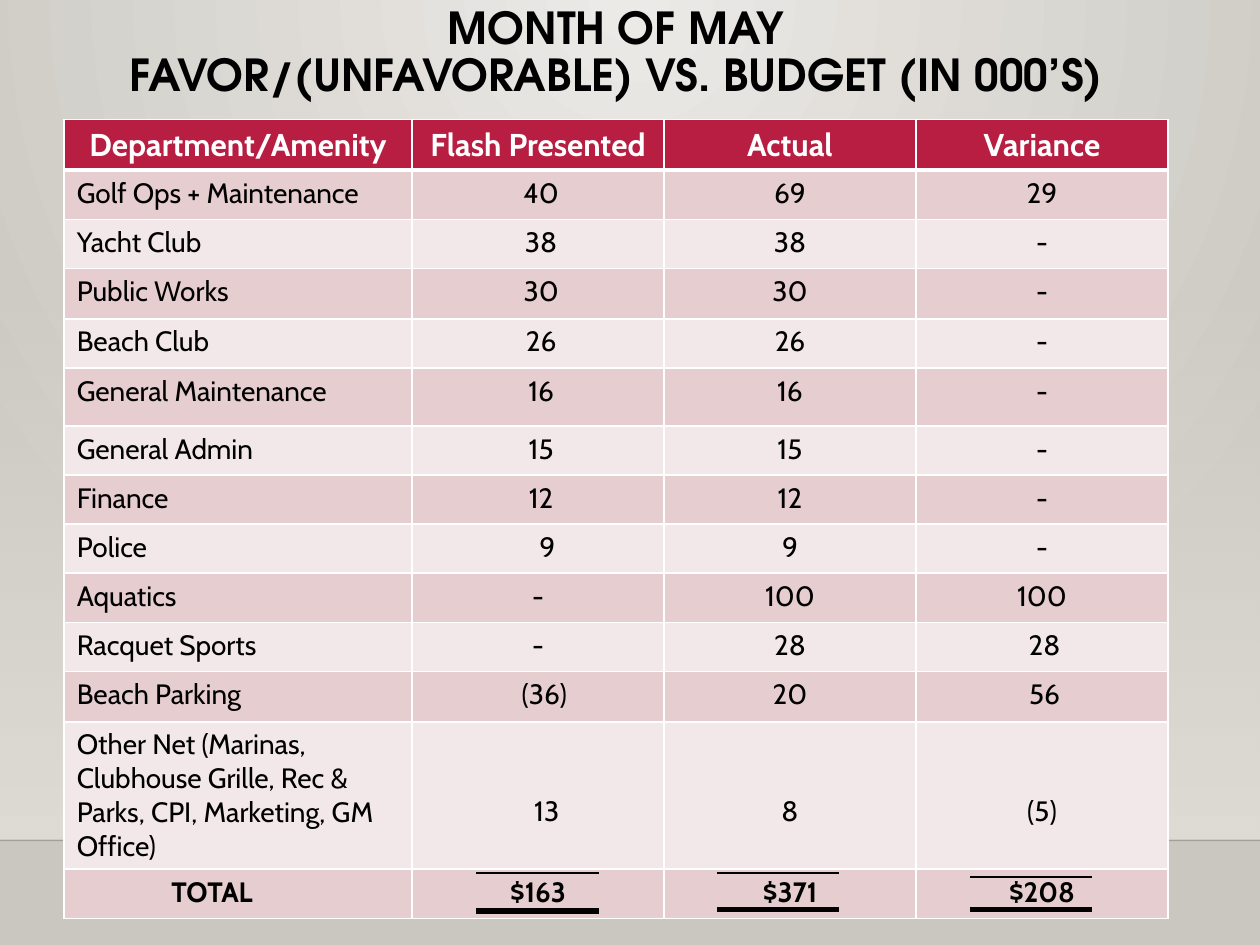
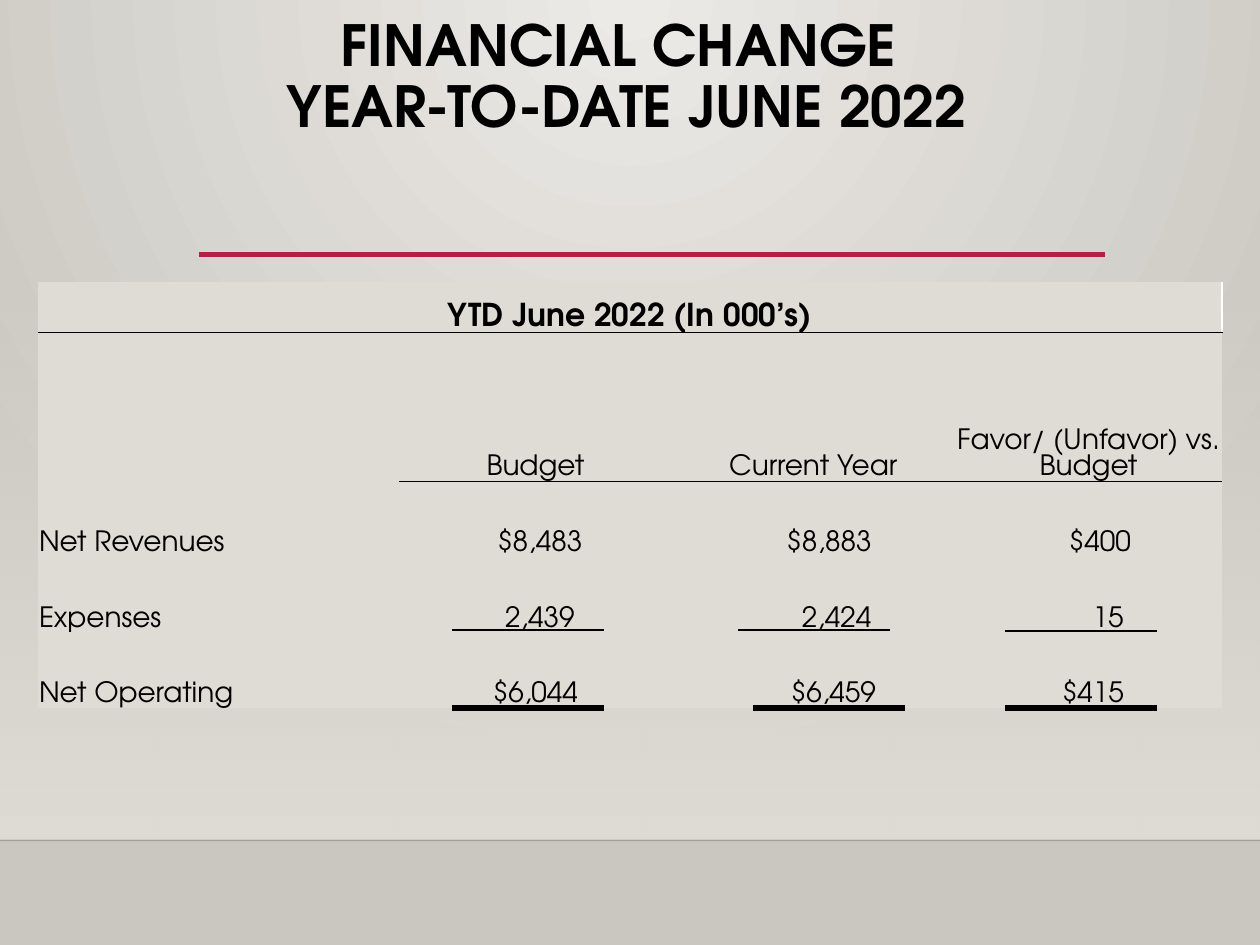
"""Build two financial slides: May variances by department and year-to-date June results."""
from pptx import Presentation
from pptx import util as u
from pptx.dml.color import RGBColor
from pptx.enum import shapes, text
from pptx.oxml import parse_xml
from pptx.oxml.ns import nsdecls, qn

COLORS = {
    "black": "000000", "white": "FFFFFF", "crimson": "B71E42", "sand": "DFDBD5",
    "glow": "ECEAE7", "stone": "CAC7C1", "rose": "E6CDCF", "blush": "F3E8E9",
    "floor": "000001",
}
TITLE_FONT = "TeX Gyre Adventor"
NO_STYLE = "{2D5ABB26-0587-4C30-8999-92F81FD0307C}"
CENTER, LEFT = text.PP_ALIGN.CENTER, text.PP_ALIGN.LEFT


def paint_gradient(parent, stops, direction):
    stop_xml = "".join(
        f'<a:gs pos="{position}"><a:srgbClr val="{COLORS[color]}">'
        f'<a:alpha val="{alpha}"/></a:srgbClr></a:gs>'
        for position, color, alpha in stops)
    gradient = parse_xml(f'<a:gradFill {nsdecls("a")} rotWithShape="1">'
                         f'<a:gsLst>{stop_xml}</a:gsLst>{direction}</a:gradFill>')
    parent.replace(parent.find(qn("a:solidFill")), gradient)


def draw_rule(slide, left, top, width, color, weight):
    rule = slide.shapes.add_connector(
        shapes.MSO_CONNECTOR.STRAIGHT, u.Inches(left), u.Inches(top),
        u.Inches(left + width), u.Inches(top))
    rule.line.color.rgb = RGBColor.from_string(COLORS[color])
    rule.line.width = u.Pt(weight)
    rule._element.spPr.append(parse_xml(f'<a:effectLst {nsdecls("a")}/>'))
    return rule


may_rows = [
    ["Department/Amenity", "Flash Presented", "Actual", "Variance"],
    ["Golf Ops + Maintenance", "40", "69", "29"],
    ["Yacht Club", "38", "38", "-"],
    ["Public Works", "30", "30", "-"],
    ["Beach Club", "26", "26", "-"],
    ["General Maintenance", "16", "16", "-"],
    ["General Admin", "15", "15", "-"],
    ["Finance", "12", "12", "-"],
    ["Police", "9", "9", "-"],
    ["Aquatics", "-", "100", "100"],
    ["Racquet Sports", "-", "28", "28"],
    ["Beach Parking", "(36)", "20", "56"],
    ["Other Net (Marinas, Clubhouse Grille, Rec & Parks, CPI, Marketing, GM Office)",
     "13", "8", "(5)"],
    ["TOTAL", "$163", "$371", "$208"],
]
june_rows = [
    ["YTD June 2022 (In 000’s)", "", "", ""],
    ["", "Budget", "Current Year", "Favor/ (Unfavor) vs. Budget"],
    ["", "", "", ""],
    ["", "", "", ""],
    ["Net Revenues", "$8,483", "$8,883", "$400"],
    ["Expenses", "2,439", "2,424", "15"],
    ["Net Operating", "$6,044", "$6,459", "$415"],
]
may_indents = {(row, 1): 0.05 for row in range(1, 8)}
may_indents.update({(8, 1): 0.15, (11, 1): 0.1, (12, 1): 0.14,
                    (10, 3): 0.04, (11, 3): 0.04, (13, 0): 0.75})
june_indents = {(4, 1): 0.07, (4, 2): 0.25, (4, 3): 0.18, (5, 1): 0.07,
                (5, 2): 0.37, (5, 3): 0.31, (6, 2): 0.32, (6, 3): 0.07}

may_borders, may_fills = {}, {}
for row in range(len(may_rows)):
    for column in range(4):
        may_borders[row, column] = {side: ("white", 1) for side in "LRTB"}
        may_fills[row, column] = "rose" if row % 2 else "blush"
        if row == 0:
            may_borders[row, column]["B"] = ("white", 3)
            may_fills[row, column] = "crimson"
        if row == 1:
            may_borders[row, column]["T"] = ("white", 3)

june_borders = {(0, column): {"B": ("black", 1)} for column in range(4)}
june_borders[0, 0] = {"R": ("white", 1), "B": ("black", 1)}
june_borders[0, 3] = june_borders[0, 0]
june_borders[1, 0] = {"T": ("black", 1)}
for column in range(1, 4):
    june_borders[1, column] = {"T": ("black", 1), "B": ("black", 1)}
    june_borders[3, column] = {"B": ("black", 1)}
    june_borders[4, column] = {"T": ("black", 1)}

pages = [
    dict(title="MONTH OF MAY\vFAVOR/(UNFAVORABLE) VS. BUDGET (IN 000’S)",
         title_box=(0.79, 0, 8.2, 0.83), title_size=25.2, accent=False,
         rows=may_rows, table_box=(0.51, 0.95, 8.75, 6.31), widths=[2.76, 2, 2, 2],
         heights=[0.39, 0.39, 0.39, 0.4, 0.39, 0.46] + [0.39] * 5 + [0.4, 1.17, 0.39],
         font="Cabin", header_color="white", bold_rows=(0, 13), merges=[],
         indents=may_indents, drops={(12, column): 0.53 for column in (1, 2, 3)},
         margins=(0.1, 0.05, 0.1, 0.05), anchor=text.MSO_ANCHOR.TOP,
         borders=may_borders, fills=may_fills, rule_width=0.97,
         rules=[(3.78, 6.93, 1.25), (3.78, 7.23, 3), (5.69, 6.93, 1.25),
                (5.69, 7.22, 3), (7.7, 6.96, 1.25), (7.7, 7.22, 3)]),
    dict(title="FINANCIAL CHANGE\v YEAR-TO-DATE JUNE 2022",
         title_box=(0.81, 0.09, 8.2, 1.13), title_size=32.4, accent=True,
         rows=june_rows, table_box=(0.3, 2.24, 9.4, 3.38), widths=[2.87, 2.16, 2.25, 2.12],
         heights=[0.4, 0.5, 0.34, 0.34, 0.6, 0.6, 0.6],
         font=TITLE_FONT, header_color="black", bold_rows=(0,),
         merges=[(0, 0, 0, 3)] + [(1, column, 3, column) for column in (1, 2, 3)],
         indents=june_indents, drops={},
         margins=(0.01, 0.01, 0.01, 0), anchor=text.MSO_ANCHOR.BOTTOM,
         borders=june_borders, fills={}, rule_width=1.2,
         rules=[(3.59, 5, 1.25), (3.59, 5.62, 3), (5.86, 5, 1.25),
                (5.98, 5.62, 3), (7.98, 5.01, 1.25), (7.98, 5.62, 3)]),
]

presentation = Presentation()
presentation.slide_width = u.Inches(10)
presentation.slide_height = u.Inches(7.5)

for page in pages:
    slide = presentation.slides.add_slide(presentation.slide_layouts[6])
    slide.background.fill.solid()
    slide.background.fill.fore_color.rgb = RGBColor.from_string(COLORS["stone"])
    paint_gradient(
        slide._element.find(".//" + qn("p:bgPr")),
        [(0, "glow", 100000), (100000, "stone", 100000)],
        '<a:path path="circle"><a:fillToRect l="43000" t="0" r="43000" b="100000"/></a:path>')

    wall = slide.shapes.add_shape(shapes.MSO_SHAPE.RECTANGLE, 0, u.Inches(2.2),
                                  u.Inches(10), u.Inches(4.46))
    wall.shadow.inherit = False
    wall.line.fill.background()
    wall.fill.solid()
    wall.fill.fore_color.rgb = RGBColor.from_string(COLORS["sand"])
    paint_gradient(wall._element.spPr, [(0, "sand", 0), (100000, "sand", 100000)],
                   '<a:lin ang="5400000" scaled="0"/>')
    floor_line = draw_rule(slide, 0, 6.67, 10, "floor", 1)
    floor_line._element.find(".//" + qn("a:srgbClr")).append(
        parse_xml(f'<a:alpha {nsdecls("a")} val="20000"/>'))
    if page["accent"]:
        draw_rule(slide, 1.58, 2.02, 7.19, "crimson", 2.5)

    title = slide.shapes.add_textbox(*map(u.Inches, page["title_box"]))
    title.text_frame.word_wrap = True
    title.text_frame.text = page["title"]
    paragraph = title.text_frame.paragraphs[0]
    paragraph.alignment = CENTER
    paragraph.line_spacing = 0.9
    for run in paragraph.runs:
        for name, value in dict(name=TITLE_FONT, size=u.Pt(page["title_size"]), bold=True).items():
            setattr(run.font, name, value)
        run.font.color.rgb = RGBColor.from_string(COLORS["black"])

    rows = page["rows"]
    table = slide.shapes.add_table(len(rows), 4, *map(u.Inches, page["table_box"])).table
    table.first_row = table.horz_banding = False
    table._tbl.tblPr.find(qn("a:tableStyleId")).text = NO_STYLE
    for column, width in zip(table.columns, page["widths"]):
        column.width = u.Inches(width)
    for row, height in zip(table.rows, page["heights"]):
        row.height = u.Inches(height)
    for top, left, bottom, right in page["merges"]:
        table.cell(top, left).merge(table.cell(bottom, right))

    for row_index, row in enumerate(rows):
        for column_index, label in enumerate(row):
            place = row_index, column_index
            cell = table.cell(*place)
            left, top, right, bottom = page["margins"]
            cell_format = dict(
                margin_left=u.Inches(left + page["indents"].get(place, 0)),
                margin_top=u.Inches(top + page["drops"].get(place, 0)),
                margin_right=u.Inches(right), margin_bottom=u.Inches(bottom),
                vertical_anchor=page["anchor"])
            for name, value in cell_format.items():
                setattr(cell, name, value)
            borders = page["borders"].get(place, {})
            for side in "LRTB":
                color, weight = borders.get(side, (None, 1))
                paint = (f'<a:solidFill><a:srgbClr val="{COLORS[color]}"/></a:solidFill>'
                         if color else "<a:noFill/>")
                cell._tc.get_or_add_tcPr().append(parse_xml(
                    f'<a:ln{side} {nsdecls("a")} w="{u.Pt(weight)}">{paint}</a:ln{side}>'))
            cell.fill.solid()
            cell.fill.fore_color.rgb = RGBColor.from_string(
                COLORS[page["fills"].get(place, "sand")])
            if not label:
                continue
            header = row_index == 0
            paragraph = cell.text_frame.paragraphs[0]
            paragraph.alignment = CENTER if header or column_index else LEFT
            run = paragraph.add_run()
            run.text = label
            font_format = dict(name=page["font"], size=u.Pt(18 if header else 16),
                               bold=row_index in page["bold_rows"])
            for name, value in font_format.items():
                setattr(run.font, name, value)
            run.font.color.rgb = RGBColor.from_string(
                COLORS[page["header_color"] if header else "black"])

    for left, top, weight in page["rules"]:
        draw_rule(slide, left, top, page["rule_width"], "black", weight)

presentation.save("out.pptx")
